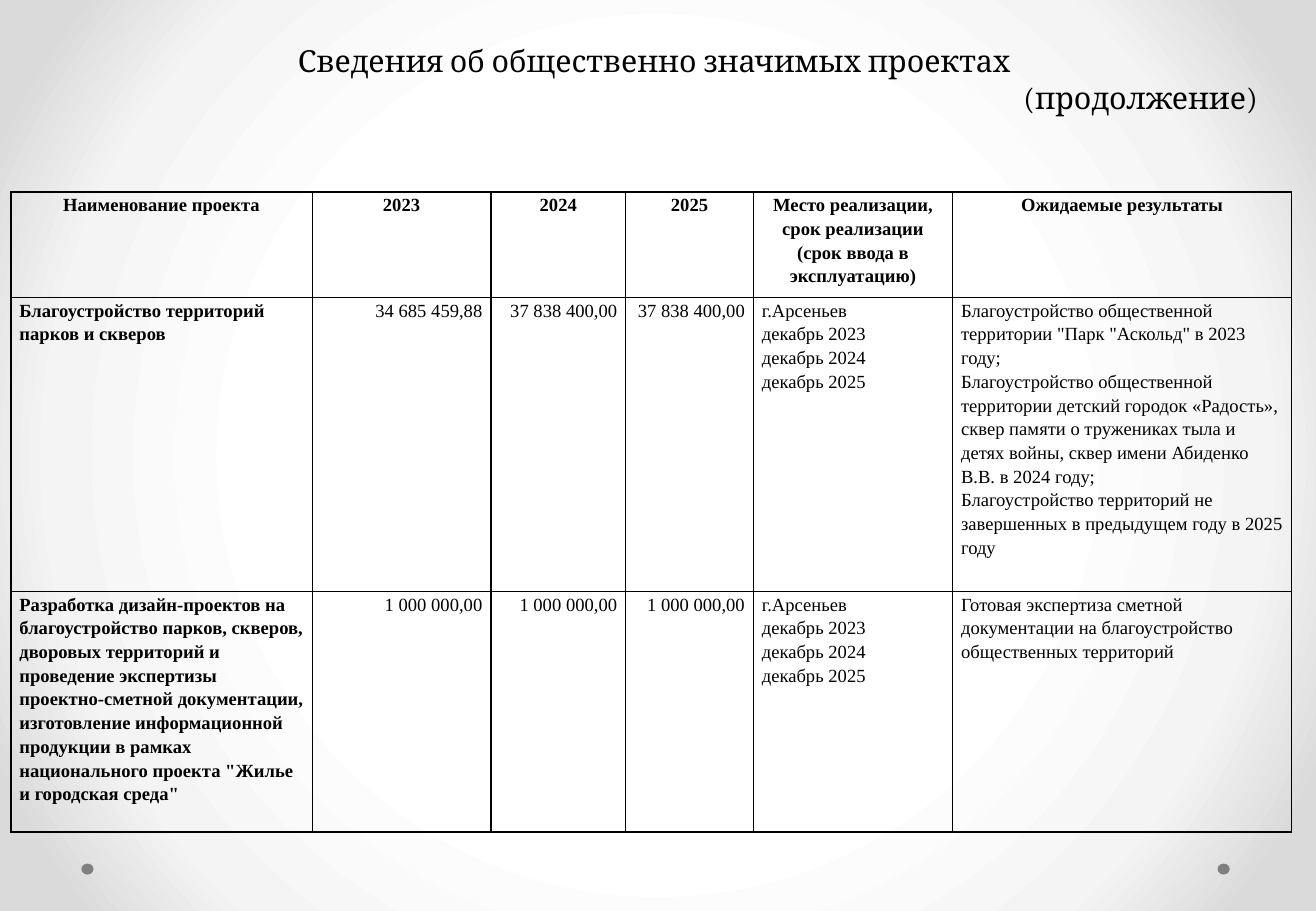
from dataclasses import dataclass

from pptx import Presentation
from pptx.dml.color import RGBColor
from pptx.enum.shapes import MSO_SHAPE
from pptx.enum.text import MSO_ANCHOR, MSO_AUTO_SIZE, PP_ALIGN
from pptx.oxml import parse_xml
from pptx.oxml.ns import nsdecls
from pptx.util import Inches, Pt

LEFT, CENTER, RIGHT = PP_ALIGN.LEFT, PP_ALIGN.CENTER, PP_ALIGN.RIGHT
TOP = MSO_ANCHOR.TOP
OVAL = MSO_SHAPE.OVAL
FIT_SHAPE = MSO_AUTO_SIZE.SHAPE_TO_FIT_TEXT


@dataclass(frozen=True)
class Theme:
    text: str = "000000"
    dot: str = "808080"
    border: str = "000000"
    background: tuple = ((50, "FFFFFF"), (76, "F4F4F4"), (92, "DADADA"))
    title_font: str = "Cambria"
    table_font: str = "Times New Roman"
    title_size: int = 18
    table_size: int = 11
    border_width: int = 1


THEME = Theme()


def add_text(paragraph, text, font, size, alignment, bold=False):
    paragraph.alignment = alignment
    run = paragraph.add_run()
    run.text = text
    run.font.name = font
    run.font.size = Pt(size)
    run.font.bold = bold
    run.font.color.rgb = RGBColor.from_string(THEME.text)


def set_borders(cell):
    properties = cell._tc.get_or_add_tcPr()
    for index, side in enumerate(("lnL", "lnR", "lnT", "lnB")):
        properties.insert(index, parse_xml(
            f'<a:{side} {nsdecls("a")} w="{Pt(THEME.border_width)}"><a:solidFill>'
            f'<a:srgbClr val="{THEME.border}"/></a:solidFill></a:{side}>'))


presentation = Presentation()
presentation.slide_width = Inches(10.83)
presentation.slide_height = Inches(7.5)
slide = presentation.slides.add_slide(presentation.slide_layouts[5])

# Radial background
slide.background.fill.solid()
background = slide.element.cSld.bg.bgPr
stops = "".join(f'<a:gs pos="{position * 1000}"><a:srgbClr val="{color}"/></a:gs>'
                for position, color in THEME.background)
background.replace(background[0], parse_xml(
    f'<a:gradFill {nsdecls("a")} rotWithShape="1"><a:gsLst>{stops}</a:gsLst>'
    '<a:path path="circle"><a:fillToRect l="50000" t="50000" r="50000" b="50000"/>'
    '</a:path></a:gradFill>'))

# Corner dots
for left in (0.67, 10.02):
    dot = slide.shapes.add_shape(OVAL, Inches(left), Inches(7.11), Inches(0.1), Inches(0.09))
    dot.shadow.inherit = False
    dot.fill.solid()
    dot.fill.fore_color.rgb = RGBColor.from_string(THEME.dot)
    dot.line.fill.background()

# Title
title = slide.shapes.title
title.left, title.top = Inches(0.32), Inches(0.3)
title.width, title.height = Inches(10.13), Inches(0.71)
title_frame = title.text_frame
title_frame.word_wrap = True
title_frame.auto_size = FIT_SHAPE
title_frame.vertical_anchor = TOP
add_text(title_frame.paragraphs[0], "Сведения об общественно значимых проектах",
         THEME.title_font, THEME.title_size, CENTER)
add_text(title_frame.add_paragraph(), "(продолжение)",
         THEME.title_font, THEME.title_size, RIGHT)

# Projects table: each cell is a list of paragraphs
place_and_dates = ["г.Арсеньев", "декабрь 2023", "декабрь 2024", "декабрь 2025"]
rows = [
    [["Наименование проекта"], ["2023"], ["2024"], ["2025"],
     ["Место реализации, срок реализации (срок ввода в эксплуатацию)"],
     ["Ожидаемые результаты"]],
    [["Благоустройство территорий парков и скверов"],
     ["34 685 459,88"], ["37 838 400,00"], ["37 838 400,00"],
     place_and_dates,
     ['Благоустройство общественной территории "Парк "Аскольд" в 2023 году;',
      "Благоустройство общественной территории детский городок «Радость», сквер памяти "
      "о тружениках тыла и детях войны, сквер имени Абиденко В.В. в 2024 году;",
      "Благоустройство территорий не завершенных в предыдущем году в 2025 году"]],
    [["Разработка дизайн-проектов на благоустройство парков, скверов, дворовых территорий "
      "и проведение экспертизы проектно-сметной документации, изготовление информационной "
      'продукции в рамках национального проекта "Жилье и городская среда"'],
     ["1 000 000,00"], ["1 000 000,00"], ["1 000 000,00"],
     place_and_dates,
     ["Готовая экспертиза сметной документации на благоустройство общественных территорий"]],
]
column_widths = (2.48, 1.47, 1.11, 1.05, 1.64, 2.79)
row_heights = (0.87, 2.42, 1.98)
column_alignments = (LEFT, RIGHT, RIGHT, RIGHT, LEFT, LEFT)

table = slide.shapes.add_table(len(row_heights), len(column_widths), Inches(0.09),
                               Inches(1.58), Inches(10.55), Inches(5.27)).table
table.first_row = False
table.horz_banding = False
for column, width in zip(table.columns, column_widths):
    column.width = Inches(width)
for row, height in zip(table.rows, row_heights):
    row.height = Inches(height)

for row_index, row_texts in enumerate(rows):
    is_header = row_index == 0
    for column_index, texts in enumerate(row_texts):
        cell = table.cell(row_index, column_index)
        cell.fill.background()
        set_borders(cell)
        cell.margin_left = cell.margin_right = Inches(0.04 if is_header else 0.07)
        cell.margin_top = cell.margin_bottom = Inches(0)
        cell.vertical_anchor = TOP
        alignment = CENTER if is_header else column_alignments[column_index]
        for text_index, text in enumerate(texts):
            frame = cell.text_frame
            paragraph = frame.add_paragraph() if text_index else frame.paragraphs[0]
            paragraph.line_spacing = 1.15
            add_text(paragraph, text, THEME.table_font, THEME.table_size, alignment,
                     bold=is_header or column_index == 0)

presentation.save("out.pptx")
